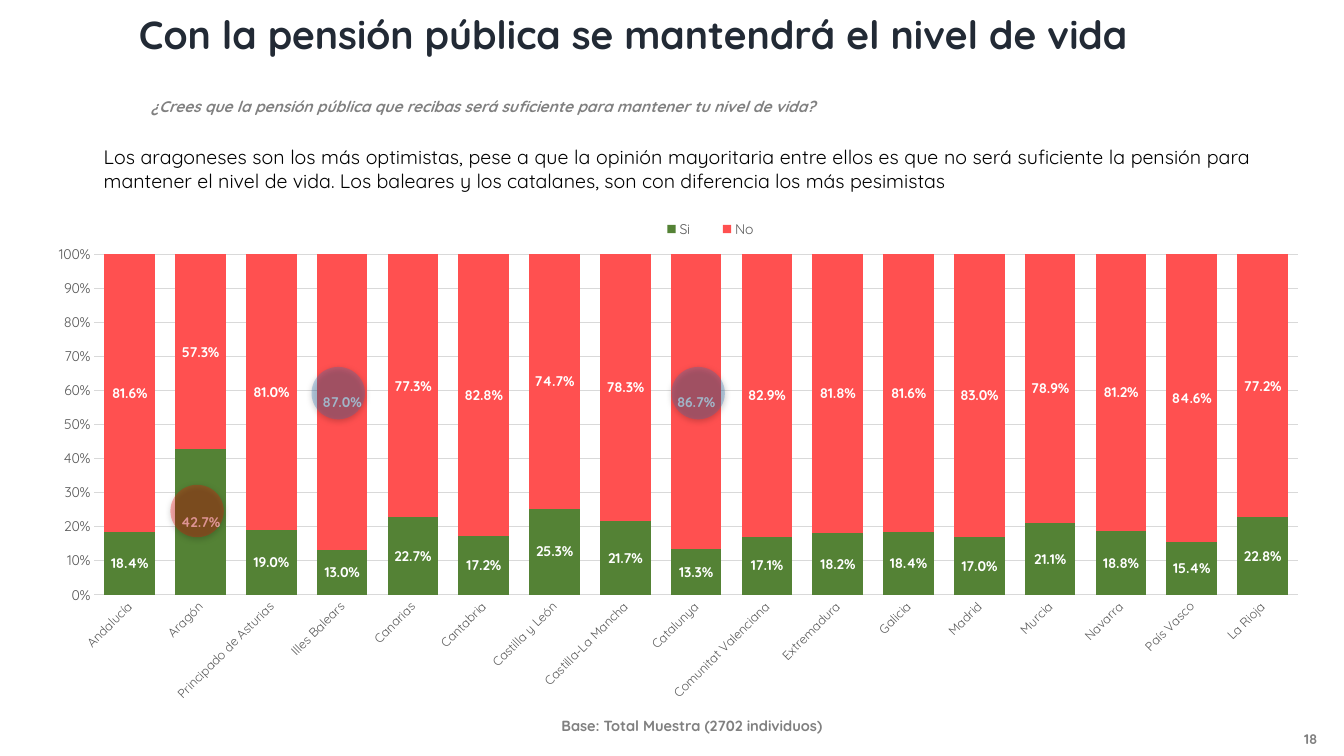
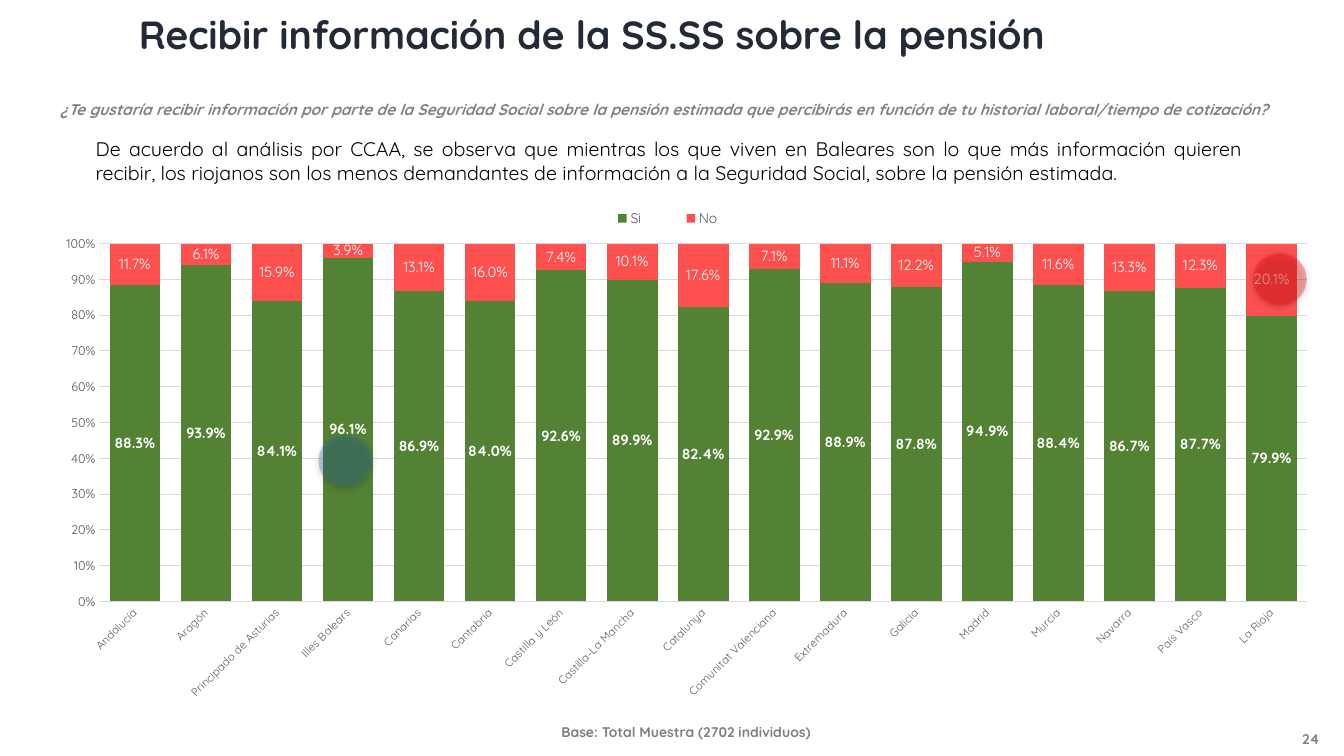
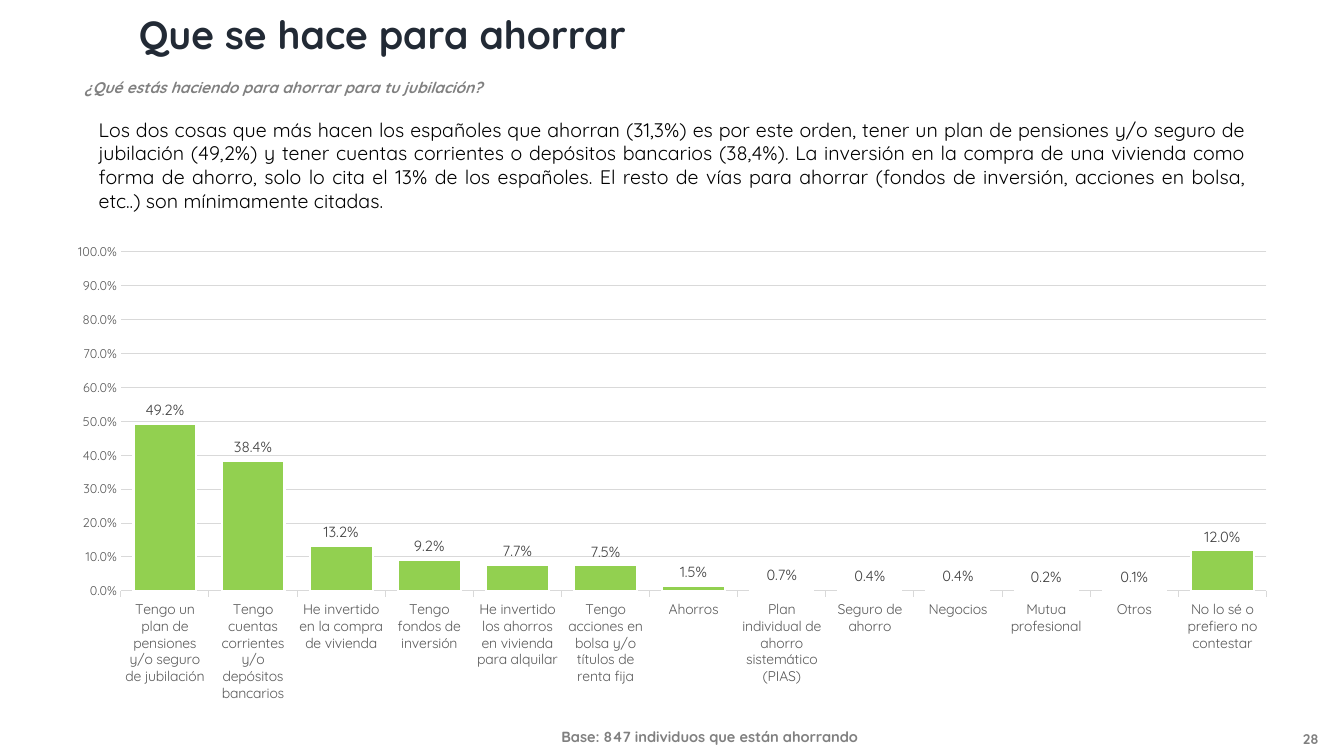
from lxml import etree
from pptx import Presentation
from pptx import util as u
from pptx.chart.data import CategoryChartData
from pptx.dml.color import RGBColor
from pptx.enum import chart as charts, shapes, text
from pptx.oxml import parse_xml
from pptx.oxml.ns import nsdecls, qn

COLORS = {
    "title": "222A35", "muted": "808080", "body": "000000", "axis": "595959",
    "grid": "D9D9D9", "yes": "548235", "no": "FF5050", "savings": "92D050",
    "value": "404040", "white": "FFFFFF", "red": "FF0000", "blue": "2E75B6",
}
FONT = "Quicksand"

REGIONS = [
    "Andalucía", "Aragón", "Principado de Asturias", "Illes Balears", "Canarias",
    "Cantabria", "Castilla y León", "Castilla-La Mancha", "Catalunya",
    "Comunitat Valenciana", "Extremadura", "Galicia", "Madrid", "Murcia",
    "Navarra", "País Vasco", "La Rioja",
]
ENOUGH_PENSION = [0.184, 0.427, 0.19, 0.13, 0.227, 0.172, 0.253, 0.217, 0.133,
                  0.171, 0.182, 0.184, 0.17, 0.211, 0.188, 0.154, 0.228]
WANTS_INFORMATION = [0.883, 0.939, 0.841, 0.961, 0.869, 0.84, 0.926, 0.899, 0.824,
                     0.929, 0.889, 0.878, 0.949, 0.884, 0.867, 0.877, 0.799]
SAVING_METHODS = {
    "Tengo un plan de pensiones y/o seguro de jubilación": 0.492,
    "Tengo cuentas corrientes y/o depósitos bancarios": 0.384,
    "He invertido en la compra de vivienda": 0.132,
    "Tengo fondos de inversión": 0.092,
    "He invertido los ahorros en vivienda para alquilar": 0.077,
    "Tengo acciones en bolsa y/o títulos de renta fija": 0.075,
    "Ahorros": 0.015,
    "Plan individual de ahorro sistemático (PIAS)": 0.007,
    "Seguro de ahorro": 0.004,
    "Negocios": 0.004,
    "Mutua profesional": 0.002,
    "Otros": 0.001,
    "No lo sé o prefiero no contestar": 0.12,
}


def rgb(name):
    return RGBColor.from_string(COLORS[name])


def set_font(font, size, color, bold=False, italic=False):
    font.name = FONT
    font.size = u.Pt(size)
    font.color.rgb = rgb(color)
    font.bold = bold
    font.italic = italic


def write(frame, wording, size, color="muted", bold=True, italic=False, align="LEFT"):
    paragraph = frame.paragraphs[0]
    paragraph.alignment = getattr(text.PP_ALIGN, align)
    run = paragraph.add_run()
    run.text = wording
    set_font(run.font, size, color, bold, italic)


def set_layout(chart, tag, index, box, target=""):
    part = chart.element.find(".//" + qn(tag))
    for old in part.findall(qn("c:layout")):
        part.remove(old)
    modes = "".join(f'<c:{side}Mode val="edge"/>' for side in "xy")
    sizes = "".join(f'<c:{key} val="{value}"/>' for key, value in zip("xywh", box))
    part.insert(index, parse_xml(
        f'<c:layout {nsdecls("c")}><c:manualLayout>{target}{modes}{sizes}'
        "</c:manualLayout></c:layout>"))


class Deck:
    def __init__(self):
        self.prs = Presentation()
        self.prs.slide_width = u.Inches(13.33)
        self.prs.slide_height = u.Inches(7.5)

    def box(self, wording, left, top, width, height, size, wrap=False, **style):
        frame = self.slide.shapes.add_textbox(
            *map(u.Inches, (left, top, width, height))).text_frame
        frame.word_wrap = wrap
        frame.auto_size = text.MSO_AUTO_SIZE.SHAPE_TO_FIT_TEXT
        write(frame, wording, size, **style)
        return frame

    def start(self, number, title, title_width):
        self.slide = self.prs.slides.add_slide(self.prs.slide_layouts[6])
        page = self.box(number, 12.66, 7.17, 0.68, 0.33, 10, wrap=True, align="CENTER")
        page.auto_size = text.MSO_AUTO_SIZE.NONE
        page.vertical_anchor = text.MSO_ANCHOR.MIDDLE
        self.box(title, 1.28, 0.05, title_width, 0.57, 28, color="title")

    def question(self, wording, left, top, width):
        self.box(wording, left, top, width, 0.29, 11, italic=True)

    def comment(self, wording, left, top, height=0.57):
        self.box(wording, left, top, 11.58, height, 14, wrap=True,
                 color="body", bold=False, align="JUSTIFY")

    def base(self, wording, top, width, size=10.5):
        self.box(wording, 5.47, top, width, 0.28, size)

    def columns(self, kind, categories, series, place, plot_box, category_size,
                value_size, axis_format, rotation=0):
        data = CategoryChartData(number_format="0.0%")
        data.categories = categories
        for name, values in series:
            data.add_series(name, values)
        chart = self.slide.shapes.add_chart(kind, *map(u.Inches, place), data).chart
        chart.has_title = False
        chart.has_legend = False
        chart.font.name = FONT
        chart.font.size = u.Pt(10)
        plot = chart.plots[0]
        plot.gap_width = 40
        plot.vary_by_categories = False

        across, up = chart.category_axis, chart.value_axis
        set_font(across.tick_labels.font, category_size, "axis")
        set_font(up.tick_labels.font, value_size, "axis")
        up.minimum_scale, up.maximum_scale, up.major_unit = 0, 1, 0.1
        up.major_tick_mark = charts.XL_TICK_MARK.NONE
        up.format.line.fill.background()
        up.tick_labels.number_format = axis_format
        up.tick_labels.number_format_is_linked = False
        for line in (across.format.line, up.major_gridlines.format.line):
            line.color.rgb = rgb("grid")
            line.width = u.Pt(0.75)
        across.format.line.color.rgb = rgb("grid")
        across._element.find(qn("c:txPr")).find(qn("a:bodyPr")).set(
            "rot", str(rotation * 60000))
        set_layout(chart, "c:plotArea", 0, plot_box, '<c:layoutTarget val="inner"/>')
        return chart

    def paint(self, series, fill, size, color, bold=False):
        series.format.fill.solid()
        series.format.fill.fore_color.rgb = rgb(fill)
        series.invert_if_negative = False
        labels = series.data_labels
        labels.show_value = True
        labels.number_format = "0.0%"
        labels.number_format_is_linked = False
        set_font(labels.font, size, color, bold)
        return labels

    def yes_no_chart(self, yes, place, plot_box, legend_box, label_size, bold_no, **axes):
        no = [round(1 - share, 3) for share in yes]
        chart = self.columns(
            charts.XL_CHART_TYPE.COLUMN_STACKED_100, REGIONS, [("Si", yes), ("No", no)],
            place, plot_box, axis_format="0%", rotation=-45, **axes)
        chart.plots[0].overlap = 100
        chart.category_axis.major_tick_mark = charts.XL_TICK_MARK.NONE
        for series, fill, bold in zip(chart.series, ("yes", "no"), (True, bold_no)):
            self.paint(series, fill, label_size, "white", bold)
        chart.has_legend = True
        chart.legend.position = charts.XL_LEGEND_POSITION.TOP
        chart.legend.include_in_layout = False
        set_font(chart.legend.font, 10, "axis")
        set_layout(chart, "c:legend", 1, legend_box)

    def savings_chart(self, place, plot_box):
        chart = self.columns(
            charts.XL_CHART_TYPE.COLUMN_CLUSTERED, list(SAVING_METHODS),
            [("Series 1", list(SAVING_METHODS.values()))], place, plot_box,
            category_size=10, value_size=9, axis_format="0.0%")
        chart.category_axis.major_tick_mark = charts.XL_TICK_MARK.OUTSIDE
        bars = chart.series[0]
        labels = self.paint(bars, "savings", 10.5, "value")
        labels.position = charts.XL_LABEL_POSITION.OUTSIDE_END
        bars.format.line.color.rgb = rgb("white")
        bars.format.line.width = u.Pt(1.5)

    def highlight(self, left, top, color):
        spot = self.slide.shapes.add_shape(
            shapes.MSO_SHAPE.OVAL, *map(u.Inches, (left, top, 0.53, 0.52)))
        spot.shadow.inherit = False
        spot.fill.solid()
        spot.fill.fore_color.rgb = rgb(color)
        spot.line.fill.background()
        props = spot._element.spPr
        tint = props.find(qn("a:solidFill")).find(qn("a:srgbClr"))
        etree.SubElement(tint, qn("a:alpha"), val="29000")
        props.find(qn("a:effectLst")).append(parse_xml(
            f'<a:outerShdw {nsdecls("a")} blurRad="57150" dist="19050" dir="5400000" '
            'algn="ctr" rotWithShape="0"><a:srgbClr val="000000">'
            '<a:alpha val="63000"/></a:srgbClr></a:outerShdw>'))


def main():
    deck = Deck()

    deck.start("18", "Con la pensión pública se mantendrá el nivel de vida", 10.41)
    deck.base("Base: Total Muestra (2702 individuos)", 7.06, 2.81)
    deck.yes_no_chart(ENOUGH_PENSION, (0.32, 2.02, 12.81, 5.04),
                      (0.048, 0.1, 0.932, 0.67), (0.47, 0.02, 0.11, 0.06),
                      label_size=10, bold_no=True, category_size=9, value_size=10)
    deck.question("¿Crees que la pensión pública que recibas será suficiente para "
                  "mantener tu nivel de vida?", 1.4, 0.91, 7.03)
    deck.comment("Los aragoneses son los más optimistas, pese a que la opinión mayoritaria "
                 "entre ellos es que no será suficiente la pensión para mantener el nivel de "
                 "vida. Los baleares y los catalanes, son con diferencia los más pesimistas",
                 0.93, 1.39)
    deck.highlight(1.69, 4.81, "red")
    for left in (3.09, 6.66):
        deck.highlight(left, 3.64, "blue")

    deck.start("24", "Recibir información de la SS.SS sobre la pensión", 9.26)
    deck.base("Base: Total Muestra (2702 individuos)", 7.13, 2.68, size=10)
    deck.question("¿Te gustaría recibir información por parte de la Seguridad Social sobre la "
                  "pensión estimada que percibirás en función de tu historial laboral/tiempo "
                  "de cotización?", 0.5, 0.94, 12.37)
    deck.yes_no_chart(WANTS_INFORMATION, (0.41, 1.91, 12.81, 5.13),
                      (0.045, 0.099, 0.935, 0.692), (0.415, 0.02, 0.14, 0.06),
                      label_size=10.5, bold_no=False, category_size=8, value_size=9)
    deck.comment("De acuerdo al análisis por CCAA, se observa que mientras los que viven en "
                 "Baleares son lo que más información quieren recibir, los riojanos son los "
                 "menos demandantes de información a la Seguridad Social, sobre la pensión "
                 "estimada.", 0.85, 1.31)
    deck.highlight(12.43, 2.51, "red")
    deck.highlight(3.16, 4.31, "blue")

    deck.start("28", "Que se hace para ahorrar", 5.17)
    deck.question("¿Qué estás haciendo para ahorrar para tu jubilación?", 0.74, 0.73, 4.34)
    deck.base("Base: 847 individuos que están ahorrando", 7.17, 3.17)
    deck.savings_chart((0.47, 2.33, 12.35, 4.73), (0.059, 0.036, 0.92, 0.711))
    deck.comment("Los dos cosas que más hacen los españoles que ahorran (31,3%) es por este "
                 "orden, tener un plan de pensiones y/o seguro de jubilación (49,2%) y tener "
                 "cuentas corrientes o depósitos bancarios (38,4%). La inversión en la compra "
                 "de una vivienda como forma de ahorro, solo lo cita el 13% de los españoles. "
                 "El resto de vías para ahorrar (fondos de inversión, acciones en bolsa, "
                 "etc..) son mínimamente citadas.", 0.88, 1.12, 1.04)

    deck.prs.save("out.pptx")


if __name__ == "__main__":
    main()
